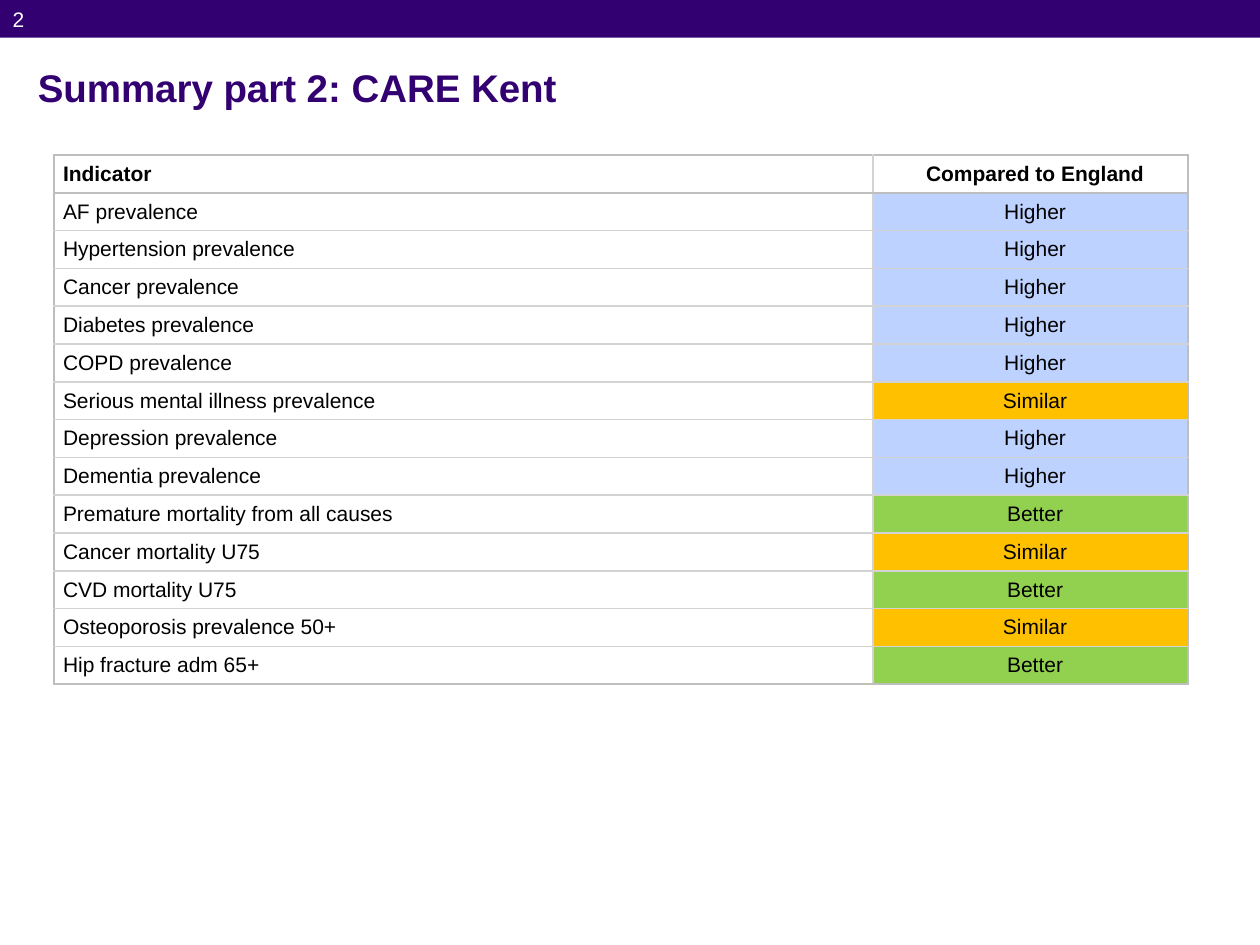
from typing import NamedTuple

import pptx
import pptx.dml.color
import pptx.enum.shapes
import pptx.enum.text
import pptx.oxml.ns
import pptx.util
from lxml import etree

Inches = pptx.util.Inches
Pt = pptx.util.Pt
RGBColor = pptx.dml.color.RGBColor
PP_ALIGN = pptx.enum.text.PP_ALIGN
MSO_ANCHOR = pptx.enum.text.MSO_ANCHOR
qn = pptx.oxml.ns.qn

PURPLE = RGBColor(0x33, 0x00, 0x72)
BLACK = RGBColor(0x00, 0x00, 0x00)
WHITE = RGBColor(0xFF, 0xFF, 0xFF)
OUTER_GREY = RGBColor(0xBE, 0xBE, 0xBE)
INNER_GREY = RGBColor(0xD3, 0xD3, 0xD3)
RATING_FILLS = {
    "Higher": RGBColor(0xBE, 0xD2, 0xFF),
    "Similar": RGBColor(0xFF, 0xC0, 0x00),
    "Better": RGBColor(0x92, 0xD0, 0x50),
}
ROW_HEIGHT = 0.3
COL_WIDTHS = (6.5, 2.5)


class Indicator(NamedTuple):
    name: str
    rating: str


HEADER = Indicator("Indicator", "Compared to England")
INDICATORS = [
    Indicator("AF prevalence", "Higher"),
    Indicator("Hypertension prevalence", "Higher"),
    Indicator("Cancer prevalence", "Higher"),
    Indicator("Diabetes prevalence", "Higher"),
    Indicator("COPD prevalence", "Higher"),
    Indicator("Serious mental illness prevalence", "Similar"),
    Indicator("Depression prevalence", "Higher"),
    Indicator("Dementia prevalence", "Higher"),
    Indicator("Premature mortality from all causes", "Better"),
    Indicator("Cancer mortality U75", "Similar"),
    Indicator("CVD mortality U75", "Better"),
    Indicator("Osteoporosis prevalence 50+", "Similar"),
    Indicator("Hip fracture adm 65+", "Better"),
]


def write_text(tf, text: str, *, size: float = 12, color: RGBColor = BLACK,
               bold: bool = False, align=PP_ALIGN.LEFT, before: float = 0,
               after: float = 0, margin: float = 0) -> None:
    """Write one unbulleted paragraph; margin is its left margin in inches."""
    p = tf.paragraphs[0]
    p.alignment = align
    p.space_before, p.space_after = Pt(before), Pt(after)
    pPr = p._p.get_or_add_pPr()
    pPr.set("marL", str(Inches(margin)))
    pPr.set("indent", "0")
    etree.SubElement(pPr, qn("a:buNone"))
    r = p.add_run()
    r.text = text
    r.font.name, r.font.size, r.font.bold = "Arial", Pt(size), bold
    r.font.color.rgb = color


def place(sp, left: float, top: float, width: float, height: float) -> None:
    sp.left, sp.top = Inches(left), Inches(top)
    sp.width, sp.height = Inches(width), Inches(height)


def set_borders(cell, **sides: RGBColor) -> None:
    """Give the sides L, R, T and B, in that order, a 1 pt line."""
    tcPr = cell._tc.get_or_add_tcPr()
    for side, color in sides.items():
        ln = etree.SubElement(tcPr, qn(f"a:ln{side}"), w=str(Pt(1)))
        fill = etree.SubElement(ln, qn("a:solidFill"))
        etree.SubElement(fill, qn("a:srgbClr"), val=str(color))


def add_banner(slide) -> None:
    sp = slide.shapes.add_shape(pptx.enum.shapes.MSO_SHAPE.RECTANGLE,
                                0, 0, Inches(10), Inches(0.3))
    sp.shadow.inherit = False
    sp.fill.solid()
    sp.fill.fore_color.rgb = PURPLE
    sp.line.fill.background()
    # The banner lies behind the placeholders.
    slide.shapes._spTree.insert(2, sp._element)


def add_indicator_table(slide, rows: list[Indicator]) -> None:
    last = len(rows) - 1
    table = slide.shapes.add_table(
        len(rows), len(COL_WIDTHS), Inches(0.43), Inches(1.23),
        Inches(sum(COL_WIDTHS)), Inches(ROW_HEIGHT * len(rows))).table
    table.first_row = table.horz_banding = False
    for column, width in zip(table.columns, COL_WIDTHS):
        column.width = Inches(width)
    for i, row in enumerate(rows):
        table.rows[i].height = Inches(ROW_HEIGHT)
        for j, text in enumerate(row):
            cell = table.cell(i, j)
            cell.margin_left = cell.margin_right = 0
            cell.margin_top = cell.margin_bottom = 0
            cell.vertical_anchor = MSO_ANCHOR.MIDDLE
            set_borders(cell,
                        L=INNER_GREY if j else OUTER_GREY,
                        R=OUTER_GREY if j else INNER_GREY,
                        T=OUTER_GREY if i <= 1 else INNER_GREY,
                        B=OUTER_GREY if i in (0, last) else INNER_GREY)
            if text in RATING_FILLS:
                cell.fill.solid()
                cell.fill.fore_color.rgb = RATING_FILLS[text]
            else:
                cell.fill.background()
            write_text(cell.text_frame, text, bold=i == 0, before=5, after=5,
                       margin=0.07, align=PP_ALIGN.CENTER if j else PP_ALIGN.LEFT)


def main() -> None:
    prs = pptx.Presentation()
    prs.slide_width, prs.slide_height = Inches(10), Inches(7.5)
    slide = prs.slides.add_slide(prs.slide_layouts[1])
    add_banner(slide)

    title = slide.shapes.title
    place(title, 0.2, 0.47, 9.61, 0.45)
    title.text_frame.vertical_anchor = MSO_ANCHOR.MIDDLE
    write_text(title.text_frame, "Summary part 2: CARE Kent",
               size=22, color=PURPLE, bold=True)

    number = slide.placeholders[1]
    place(number, 0, 0, 0.63, 0.63)
    write_text(number.text_frame, "2", color=WHITE, before=2.4, after=4.9)

    add_indicator_table(slide, [HEADER, *INDICATORS])
    prs.save("out.pptx")


if __name__ == "__main__":
    main()
